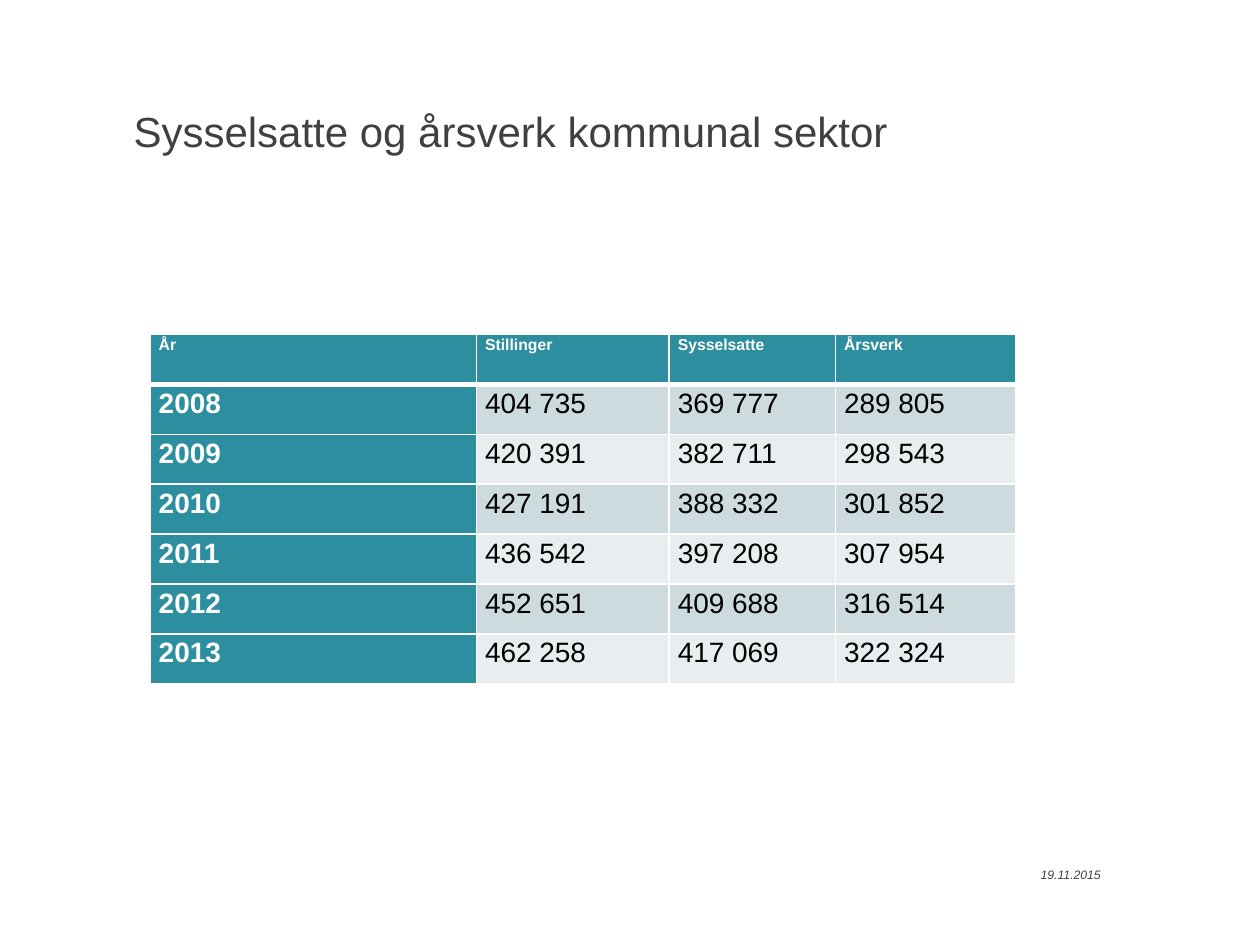
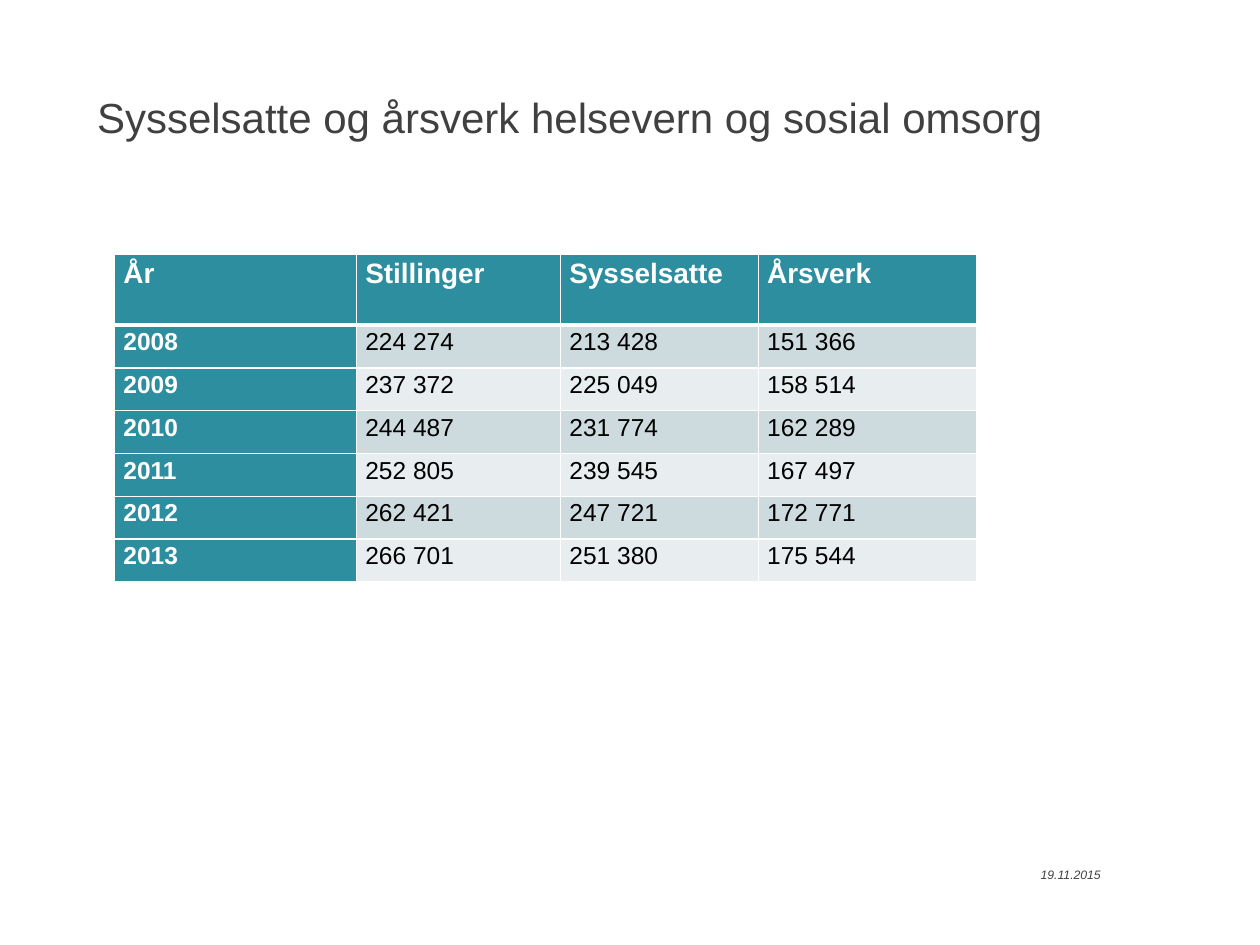
from dataclasses import dataclass

import lxml.etree
import pptx
import pptx.dml.color
import pptx.enum.text
import pptx.oxml.ns
import pptx.slide
import pptx.table
import pptx.text.text
import pptx.util

Inches = pptx.util.Inches
Pt = pptx.util.Pt
RGB = pptx.dml.color.RGBColor.from_string
Align = pptx.enum.text.PP_ALIGN
Anchor = pptx.enum.text.MSO_ANCHOR
qn = pptx.oxml.ns.qn


@dataclass(frozen=True)
class Theme:
    font: str = "Arial"
    text: str = "404040"
    head_fill: str = "2D8E9F"
    head_text: str = "FFFFFF"
    body_text: str = "000000"
    bands: tuple[str, str] = ("CDDBDF", "E8EEF0")
    border: str = "FFFFFF"
    thin: float = 1
    thick: float = 3
    title_size: float = 24
    date_size: float = 7
    line_spacing: float = 1.12
    cell_margin: float = 0.07


@dataclass(frozen=True)
class StaffTable:
    """One slide's title and yearly figures; lengths are in inches."""
    title: str
    title_at: tuple[float, float]
    table_at: tuple[float, float]
    col_widths: tuple[float, ...]
    height: float
    head_height: float
    head_size: float
    body_size: float
    figures: dict[int, tuple[int, int, int]]


THEME = Theme()
HEADINGS = ("År", "Stillinger", "Sysselsatte", "Årsverk")
DATE = "19.11.2015"

STAFF_TABLES = (
    StaffTable(
        "Sysselsatte og årsverk kommunal sektor",
        (1.06, 0.84), (1.19, 2.65), (2.59, 1.53, 1.32, 1.43),
        2.78, 0.4, 9, 16,
        {
            2008: (404735, 369777, 289805),
            2009: (420391, 382711, 298543),
            2010: (427191, 388332, 301852),
            2011: (436542, 397208, 307954),
            2012: (452651, 409688, 316514),
            2013: (462258, 417069, 322324),
        },
    ),
    StaffTable(
        "Sysselsatte og årsverk helsevern og sosial omsorg",
        (0.77, 0.73), (0.91, 2.02), (1.92, 1.62, 1.57, 1.73),
        2.6, 0.56, 16, 14,
        {
            2008: (224274, 213428, 151366),
            2009: (237372, 225049, 158514),
            2010: (244487, 231774, 162289),
            2011: (252805, 239545, 167497),
            2012: (262421, 247721, 172771),
            2013: (266701, 251380, 175544),
        },
    ),
)


def format_runs(p: pptx.text.text._Paragraph, size: float, color: str,
                bold: bool = False, italic: bool = False) -> None:
    for r in p.runs:
        r.font.name = THEME.font
        r.font.size = Pt(size)
        r.font.color.rgb = RGB(color)
        r.font.bold = bold
        r.font.italic = italic


def clear_margins(tf: pptx.text.text.TextFrame) -> None:
    tf.margin_left = tf.margin_top = tf.margin_right = tf.margin_bottom = 0


def add_title(slide: pptx.slide.Slide, text: str, at: tuple[float, float]) -> None:
    sp = slide.shapes.title
    sp.left, sp.top = map(Inches, at)
    sp.width, sp.height = Inches(8.46), Inches(0.4)
    tf = sp.text_frame
    clear_margins(tf)
    tf.auto_size = pptx.enum.text.MSO_AUTO_SIZE.NONE
    tf.vertical_anchor = Anchor.TOP
    tf.text = text
    p = tf.paragraphs[0]
    p.alignment = Align.LEFT
    format_runs(p, THEME.title_size, THEME.text)


def add_date(slide: pptx.slide.Slide) -> None:
    sp = slide.shapes.add_textbox(Inches(8.26), Inches(6.88), Inches(0.6), Inches(0.12))
    tf = sp.text_frame
    clear_margins(tf)
    tf.vertical_anchor = Anchor.MIDDLE
    tf.text = DATE
    format_runs(tf.paragraphs[0], THEME.date_size, THEME.text, italic=True)


def set_borders(cell: pptx.table._Cell, row: int) -> None:
    """Draw thin borders, with a thick one between the header and the first year."""
    widths = {
        "L": THEME.thin,
        "R": THEME.thin,
        "T": THEME.thick if row == 1 else THEME.thin,
        "B": THEME.thick if row == 0 else THEME.thin,
    }
    tc_pr = cell._tc.get_or_add_tcPr()
    for side, width in widths.items():
        ln = lxml.etree.SubElement(tc_pr, qn(f"a:ln{side}"), w=str(Pt(width)))
        fill = lxml.etree.SubElement(ln, qn("a:solidFill"))
        lxml.etree.SubElement(fill, qn("a:srgbClr"), val=THEME.border)


def fill_cell(cell: pptx.table._Cell, text: str, row: int, col: int, size: float) -> None:
    is_head = row == 0 or col == 0
    set_borders(cell, row)
    cell.fill.solid()
    cell.fill.fore_color.rgb = RGB(THEME.head_fill if is_head else THEME.bands[(row - 1) % 2])
    cell.margin_left = cell.margin_right = Inches(THEME.cell_margin)
    cell.margin_top = cell.margin_bottom = 0
    cell.text_frame.text = text
    p = cell.text_frame.paragraphs[0]
    p.alignment = Align.JUSTIFY if col else Align.LEFT
    p.line_spacing = THEME.line_spacing
    format_runs(p, size, THEME.head_text if is_head else THEME.body_text, bold=is_head)


def add_staff_table(slide: pptx.slide.Slide, staff: StaffTable) -> None:
    rows = [HEADINGS]
    for year, counts in staff.figures.items():
        rows.append((str(year), *(f"{n:,}".replace(",", " ") for n in counts)))
    left, top = map(Inches, staff.table_at)
    table = slide.shapes.add_table(
        len(rows), len(HEADINGS), left, top,
        Inches(sum(staff.col_widths)), Inches(staff.height),
    ).table
    for column, width in zip(table.columns, staff.col_widths):
        column.width = Inches(width)
    body_height = (staff.height - staff.head_height) / len(staff.figures)
    for i, texts in enumerate(rows):
        table.rows[i].height = Inches(body_height if i else staff.head_height)
        for j, text in enumerate(texts):
            size = staff.body_size if i else staff.head_size
            fill_cell(table.cell(i, j), text, i, j, size)


def main() -> None:
    prs = pptx.Presentation()
    prs.slide_width, prs.slide_height = Inches(10), Inches(7.5)
    title_only = prs.slide_layouts[5]
    for staff in STAFF_TABLES:
        slide = prs.slides.add_slide(title_only)
        add_title(slide, staff.title, staff.title_at)
        add_staff_table(slide, staff)
        add_date(slide)
    prs.save("out.pptx")


if __name__ == "__main__":
    main()
